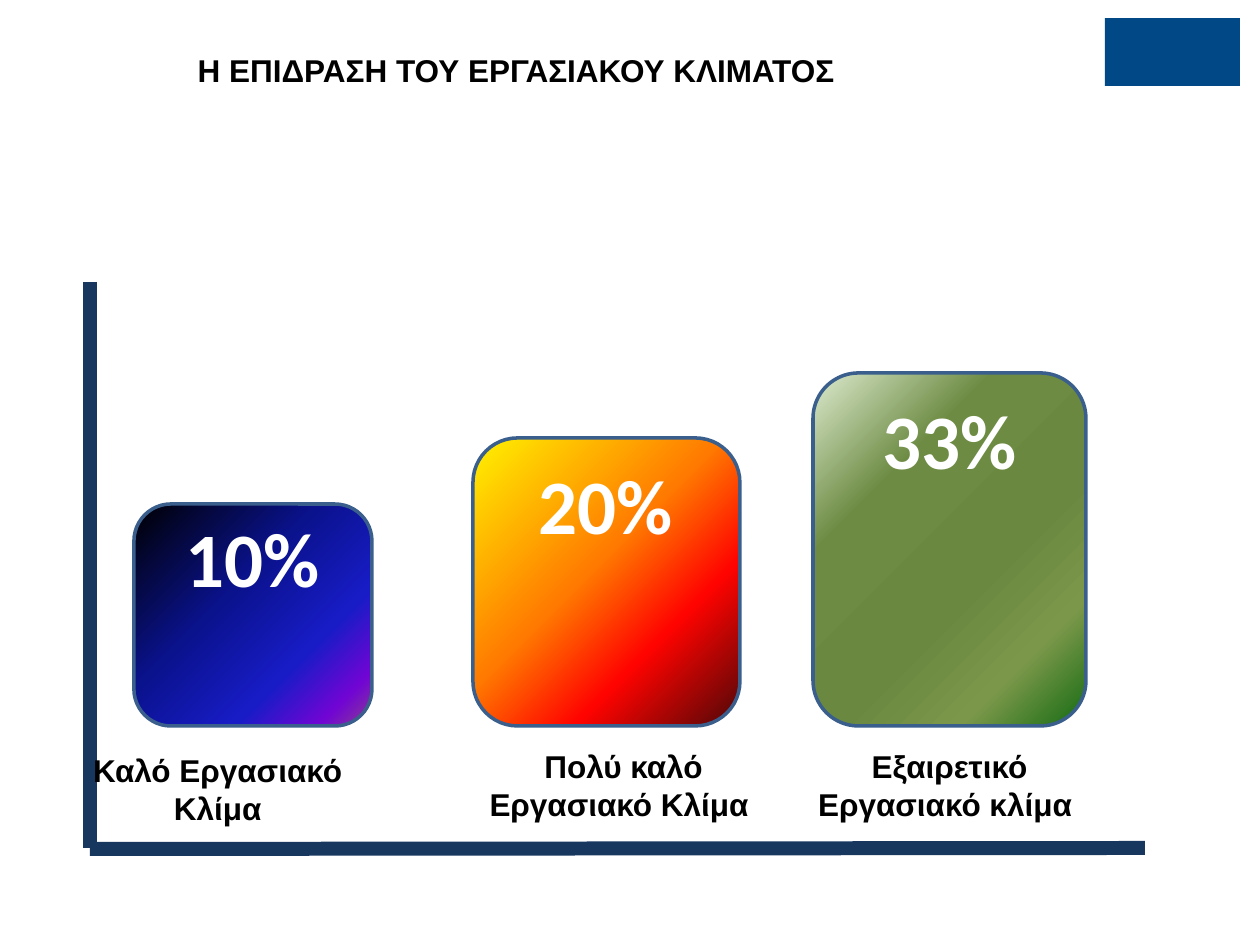
"""Slide showing the effect of the work climate as three rising bars."""
from lxml.etree import SubElement
from pptx import Presentation
from pptx.dml.color import RGBColor as RGB
from pptx.enum.shapes import MSO_CONNECTOR as CONN, MSO_SHAPE as SHAPE
from pptx.enum.text import PP_ALIGN as ALIGN
from pptx.oxml.ns import qn
from pptx.util import Pt

PX = 914400 // 126
COLORS = {"axis": "17375E", "border": "3A5F8C", "text": "000000",
          "value": "FFFFFF", "logo": "004986"}

prs = Presentation()
prs.slide_width, prs.slide_height = 1260 * PX, 945 * PX
slide = prs.slides.add_slide(prs.slide_layouts[6])


def add_text(text, x, y, w, h, size=18, font="Arial", color="text", wrap=True):
    tf = slide.shapes.add_textbox(x * PX, y * PX, w * PX, h * PX).text_frame
    tf.word_wrap = wrap
    tf.text = text
    for p in tf.paragraphs:
        p.alignment = ALIGN.CENTER
        for r in p.runs:
            r.font.name, r.font.size, r.font.bold = font, Pt(size), True
            r.font.color.rgb = RGB.from_string(COLORS[color])


logo = slide.shapes.add_shape(SHAPE.RECTANGLE, 1105 * PX, 18 * PX, 135 * PX, 68 * PX)
logo.shadow.inherit = False
logo.fill.solid()
logo.fill.fore_color.rgb = RGB.from_string(COLORS["logo"])
logo.line.fill.background()

add_text("Η ΕΠΙΔΡΑΣΗ ΤΟΥ ΕΡΓΑΣΙΑΚΟΥ ΚΛΙΜΑΤΟΣ ", 63, 45, 915, 116)

BASE = 726
bars = [
    (813, 273, 353, [(0, "DDEBCF"), (29, "6D8B43"), (60, "6A8840"), (80, "7B984A"), (100, "156B13")]),
    (473, 267, 288, [(0, "FFF200"), (45, "FF7A00"), (70, "FF0300"), (100, "4D0808")]),
    (134, 238, 222, [(0, "000000"), (40, "0A128C"), (70, "181CC7"), (88, "7005D4"), (100, "8C3D91")]),
]
for x, w, h, stops in bars:
    s = slide.shapes.add_shape(SHAPE.ROUNDED_RECTANGLE, x * PX, (BASE - h) * PX, w * PX, h * PX)
    s.shadow.inherit = False
    s.line.color.rgb = RGB.from_string(COLORS["border"])
    s.line.width = Pt(2)
    s.fill.gradient()
    s.fill.gradient_angle = 315
    gs_list = s._element.spPr.find(qn("a:gradFill")).find(qn("a:gsLst"))
    for gs in list(gs_list):
        gs_list.remove(gs)
    for pos, color in stops:
        gs = SubElement(gs_list, qn("a:gs"), pos=str(pos * 1000))
        SubElement(gs, qn("a:srgbClr"), val=color)

for value, x, y in [("10%", 161, 504), ("20%", 514, 451), ("33%", 858, 386)]:
    add_text(value, x, y, 183, 106, size=44, font="Calibri", color="value")

for x1, y1, x2, y2 in [(90, 282, 90, 848), (90, 849, 1145, 848)]:
    axis = slide.shapes.add_connector(CONN.STRAIGHT, x1 * PX, y1 * PX, x2 * PX, y2 * PX)
    axis.line.color.rgb = RGB.from_string(COLORS["axis"])
    axis.line.width = Pt(8)
    SubElement(axis._element.spPr, qn("a:effectLst"))

add_text("Πολύ καλό Εργασιακό Κλίμα ", 469, 741, 309, 88)
add_text("Εξαιρετικό Εργασιακό κλίμα ", 795, 741, 309, 88)
add_text("Καλό Εργασιακό \nΚλίμα ", 79, 745, 286, 89, wrap=False)

prs.save("out.pptx")
